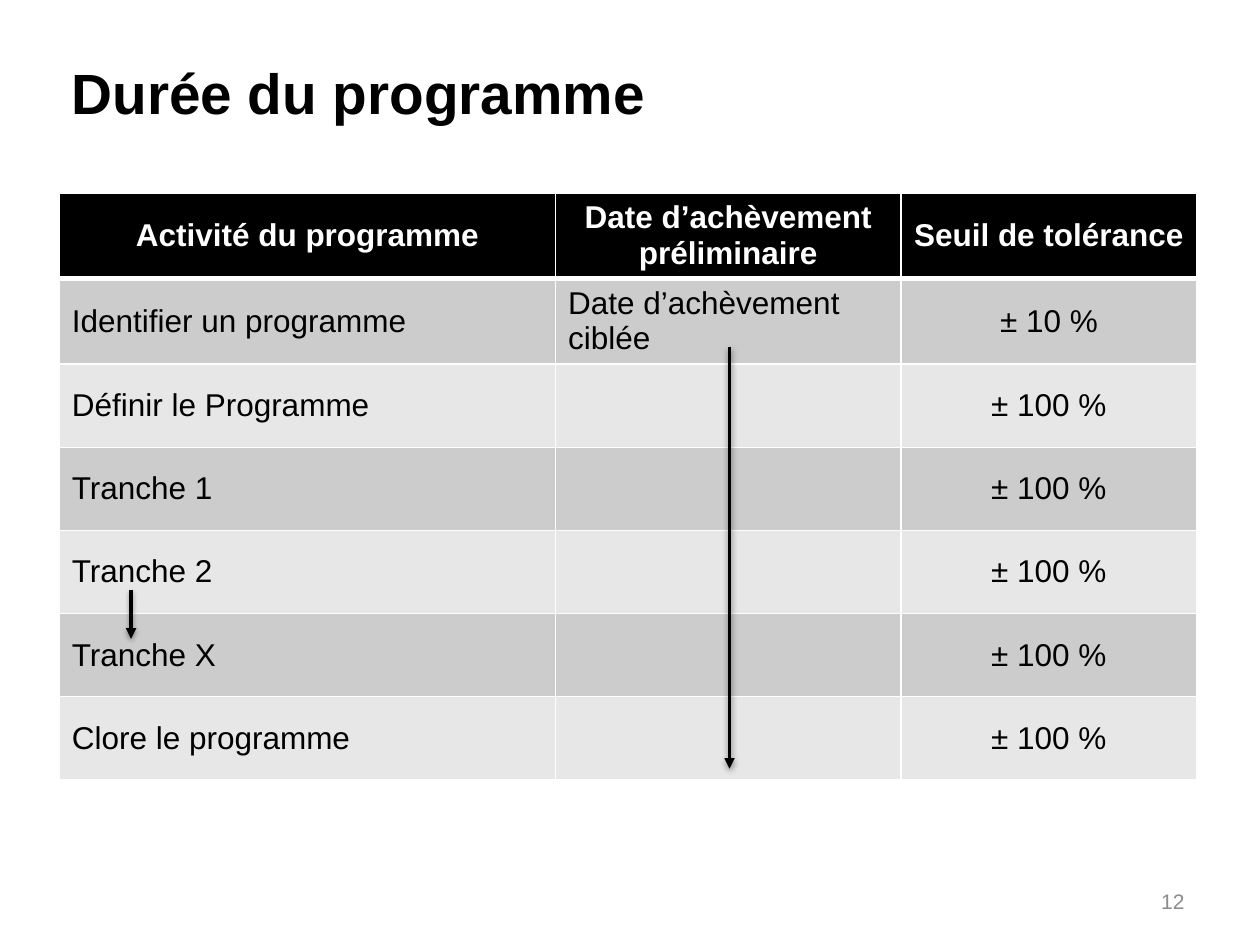
"""Build the programme duration slide with its tolerance table."""
from lxml import etree
from pptx import Presentation
from pptx.dml.color import RGBColor
from pptx.enum import shapes, text
from pptx.oxml import parse_xml
from pptx.oxml.ns import nsdecls
from pptx.util import Inches, Pt

COLORS = {"ink": "000000", "paper": "FFFFFF", "dark_band": "CCCCCC",
          "light_band": "E7E7E7", "number": "8C8C8C"}
LEFT, CENTER, RIGHT = text.PP_ALIGN.LEFT, text.PP_ALIGN.CENTER, text.PP_ALIGN.RIGHT


def write(frame, words, align, color, **font_format):
    paragraph = frame.paragraphs[0]
    paragraph.alignment = align
    run = paragraph.add_run()
    run.text = words
    for name, value in {"name": "Arial", "bold": False, **font_format}.items():
        setattr(run.font, name, value)
    run.font.color.rgb = RGBColor.from_string(COLORS[color])


def add_xml(parent, xml, position):
    parent.insert(position, parse_xml(xml.replace(">", f" {nsdecls('a')}>", 1)))


deck = Presentation()
deck.slide_width, deck.slide_height = Inches(10), Inches(7.5)
slide = deck.slides.add_slide(deck.slide_layouts[6])

title = slide.shapes.add_textbox(Inches(0.47), Inches(0.38), Inches(9.41), Inches(1.11)).text_frame
page_number = slide.shapes.add_textbox(Inches(7.17), Inches(6.95), Inches(2.33), Inches(0.4)).text_frame
title.word_wrap = page_number.word_wrap = True
title.vertical_anchor = text.MSO_ANCHOR.TOP
title.margin_top = Inches(0.08)
page_number.vertical_anchor = text.MSO_ANCHOR.MIDDLE
write(title, "Durée du programme", LEFT, "ink", size=Pt(32.4), bold=True)
write(page_number, "12", RIGHT, "number", size=Pt(12))

rows = [
    ("Activité du programme", "Date d’achèvement préliminaire", "Seuil de tolérance"),
    ("Identifier un programme", "Date d’achèvement ciblée", "± 10 %"),
    ("Définir le Programme", "", "± 100 %"),
    ("Tranche 1", "", "± 100 %"),
    ("Tranche 2", "", "± 100 %"),
    ("Tranche X", "", "± 100 %"),
    ("Clore le programme", "", "± 100 %"),
]
widths = [3.94, 2.74, 2.35]
row_height = 0.66
schedule = slide.shapes.add_table(len(rows), len(widths), Inches(0.47), Inches(1.53),
                                  Inches(sum(widths)), Inches(row_height * len(rows))).table
for column, width in zip(schedule.columns, widths):
    column.width = Inches(width)

for r, row in enumerate(rows):
    schedule.rows[r].height = Inches(row_height)
    header = r == 0
    band = "ink" if header else ("dark_band" if r % 2 else "light_band")
    for c, words in enumerate(row):
        cell = schedule.cell(r, c)
        cell.vertical_anchor = text.MSO_ANCHOR.MIDDLE
        cell.margin_top = cell.margin_bottom = Inches(0.04)
        cell.fill.solid()
        cell.fill.fore_color.rgb = RGBColor.from_string(COLORS[band])
        borders = {"lnL": 1, "lnR": 1, "lnT": 3 if r == 1 else 1, "lnB": 3 if header else 1}
        for position, (side, points) in enumerate(borders.items()):
            add_xml(cell._tc.get_or_add_tcPr(),
                    f'<a:{side} w="{Pt(points)}"><a:solidFill><a:srgbClr val="{COLORS["paper"]}"/>'
                    f'</a:solidFill></a:{side}>', position)
        if words:
            write(cell.text_frame, words, CENTER if header or c == 2 else LEFT,
                  "paper" if header else "ink", size=Pt(18), bold=header)

for x, start, end in [(1.04, 4.68, 5.07), (5.79, 2.75, 6.1)]:
    arrow = slide.shapes.add_connector(shapes.MSO_CONNECTOR.STRAIGHT, Inches(x), Inches(start),
                                       Inches(x), Inches(end))
    arrow.line.color.rgb = RGBColor.from_string(COLORS["ink"])
    arrow.line.width = Pt(2)
    outline = arrow.line._get_or_add_ln()
    add_xml(outline, '<a:tailEnd type="triangle"></a:tailEnd>', len(outline))
    properties = arrow._element.spPr
    add_xml(properties,
            f'<a:effectLst><a:outerShdw blurRad="{Pt(3.1)}" dist="{Pt(1.6)}" dir="5400000" rotWithShape="0">'
            f'<a:srgbClr val="{COLORS["ink"]}"><a:alpha val="38000"/></a:srgbClr>'
            '</a:outerShdw></a:effectLst>', len(properties))

deck.save("out.pptx")
